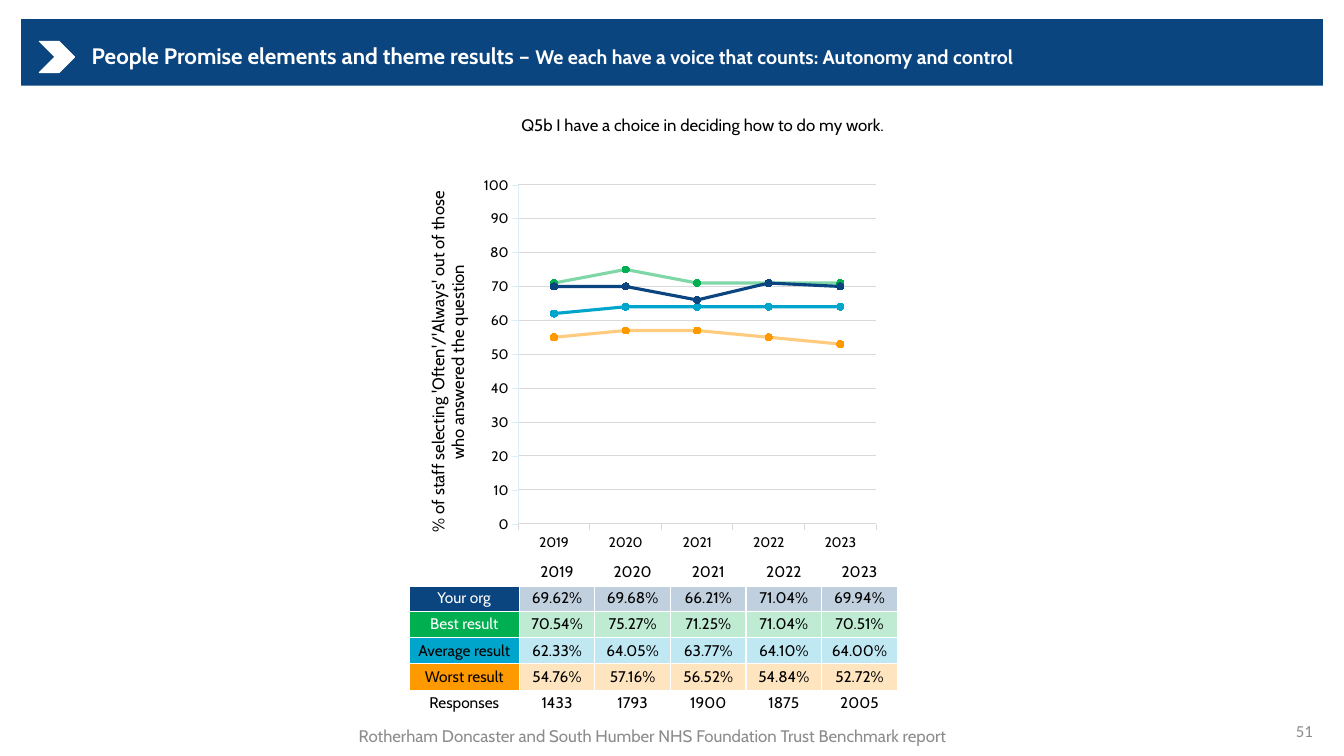
from dataclasses import dataclass

from lxml.etree import SubElement
from pptx import Presentation
from pptx.chart.data import CategoryChartData
from pptx.dml.color import RGBColor
from pptx.enum.chart import XL_CHART_TYPE as ChartType, XL_MARKER_STYLE as Marker, XL_TICK_MARK as Tick
from pptx.enum.shapes import MSO_SHAPE as Shape
from pptx.enum.text import MSO_ANCHOR as Anchor, MSO_AUTO_SIZE as AutoSize, PP_ALIGN as Align
from pptx.oxml.ns import qn
from pptx.util import Inches, Pt


@dataclass(frozen=True)
class Theme:
    font: str = "Cabin"
    number_font: str = "Calibri"
    navy: str = "0B457F"
    green: str = "00B050"
    cyan: str = "00A5CC"
    orange: str = "FF9900"
    white: str = "FFFFFF"
    black: str = "000000"
    grey: str = "8C8C8C"
    grid: str = "D9D9D9"
    axis: str = "DBEFF9"
    heading: int = 16
    subheading: int = 14
    label: int = 12
    cell: int = 11
    tick: int = 10


THEME = Theme()
CHART_WIDTH, CHART_HEIGHT = 4.84, 4.48
YEARS = ["2019", "2020", "2021", "2022", "2023"]
RESPONSES = [1433, 1793, 1900, 1875, 2005]
# name: (colour, label colour, line opacity in percent, yearly percentages)
RESULTS = {
    "Your org": (THEME.navy, THEME.white, 100, [69.62, 69.68, 66.21, 71.04, 69.94]),
    "Best result": (THEME.green, THEME.white, 50, [70.54, 75.27, 71.25, 71.04, 70.51]),
    "Average result": (THEME.cyan, THEME.black, 100, [62.33, 64.05, 63.77, 64.10, 64.00]),
    "Worst result": (THEME.orange, THEME.black, 50, [54.76, 57.16, 56.52, 54.84, 52.72]),
}
DRAW_ORDER = ["Average result", "Best result", "Worst result", "Your org"]


def style_font(font, size, color=THEME.black, name=THEME.font, bold=False):
    for key, value in {"size": Pt(size), "name": name, "bold": bold}.items():
        setattr(font, key, value)
    font.color.rgb = RGBColor.from_string(color)


def paint(fill, color):
    fill.solid()
    fill.fore_color.rgb = RGBColor.from_string(color)


def style_line(line, color, width):
    paint(line.fill, color)
    line.width = Pt(width)


def set_opacity(element, percent):
    for color in element.iter(qn("a:srgbClr")):
        SubElement(color, qn("a:alpha"), val=str(percent * 1000))


def add_run(para, text, size, **style):
    run = para.add_run()
    run.text = text
    style_font(run.font, size, **style)


def add_header_shape(page, kind, *place):
    shape = page.shapes.add_shape(kind, *map(Inches, place))
    shape.shadow.inherit = False
    shape.line.fill.background()
    return shape


def add_header(page):
    band = add_header_shape(page, Shape.RECTANGLE, 0.21, 0.19, 12.91, 0.66)
    paint(band.fill, THEME.navy)
    chevron = add_header_shape(page, Shape.CHEVRON, 0.39, 0.41, 0.35, 0.31)
    paint(chevron.fill, THEME.white)
    style_line(chevron.line, THEME.white, 0.75)

    title = page.shapes.title
    page.shapes._spTree.append(title._element)  # bring in front of the band
    place = {"left": 0.81, "top": 0.35, "width": 9.61, "height": 0.44}
    for key, value in place.items():
        setattr(title, key, Inches(value))
    frame = title.text_frame
    frame.auto_size = AutoSize.NONE
    frame.vertical_anchor = Anchor.MIDDLE
    para = frame.paragraphs[0]
    para.alignment = Align.LEFT
    para.line_spacing = 0.9
    for text, size in (
        ("People Promise elements and theme results – ", THEME.heading),
        ("We each have a voice that counts: Autonomy and control", THEME.subheading),
    ):
        add_run(para, text, size, color=THEME.white, bold=True)


def set_layout(element, index, **inches):
    """Place a chart part by inches from the chart's top left corner."""
    for old in element.findall(qn("c:layout")):
        element.remove(old)
    layout = SubElement(element, qn("c:layout"))
    element.insert(index, layout)
    manual = SubElement(layout, qn("c:manualLayout"))
    if "w" in inches:
        SubElement(manual, qn("c:layoutTarget"), val="inner")
    for key in ("x", "y"):
        SubElement(manual, qn(f"c:{key}Mode"), val="edge")
    for key, value in inches.items():
        whole = CHART_WIDTH if key in "xw" else CHART_HEIGHT
        SubElement(manual, qn(f"c:{key}"), val=str(value / whole))


def set_chart_title(title, text, **inches):
    para = title.text_frame.paragraphs[0]
    add_run(para, text, THEME.label)
    set_layout(title._element, 1, **inches)


def style_axis(axis, color, width):
    axis.major_tick_mark = Tick.OUTSIDE
    axis.minor_tick_mark = Tick.NONE
    style_font(axis.tick_labels.font, THEME.tick)
    style_line(axis.format.line, color, width)


def style_series(series, color, opacity):
    series.smooth = False
    style_line(series.format.line, color, 2.25)
    if opacity < 100:
        set_opacity(series._element, opacity)
    marker = series.marker
    marker.style = Marker.CIRCLE
    marker.size = 5
    paint(marker.format.fill, color)
    style_line(marker.format.line, color, 0.75)


def add_results_chart(page):
    data = CategoryChartData(number_format="0")
    data.categories = YEARS
    for name in DRAW_ORDER:
        data.add_series(name, [round(value) for value in RESULTS[name][-1]])
    place = map(Inches, (4.15, 0.98, CHART_WIDTH, CHART_HEIGHT))
    chart = page.shapes.add_chart(ChartType.LINE_MARKERS, *place, data).chart
    style_font(chart.font, THEME.tick)
    chart.has_legend = False
    chart.has_title = True
    set_chart_title(chart.chart_title, "Q5b I have a choice in deciding how to do my work.", x=0.99, y=0.12)
    set_layout(chart._chartSpace.chart.plotArea, 0, x=0.99, y=0.86, w=3.55, h=3.39)

    plot = chart.plots[0]
    plot.vary_by_categories = False
    for series in plot.series:
        color, _, opacity, _ = RESULTS[series.name]
        style_series(series, color, opacity)

    style_axis(chart.category_axis, THEME.grid, 0.75)
    values = chart.value_axis
    style_axis(values, THEME.axis, 0.25)
    for key, value in {"minimum_scale": 0, "maximum_scale": 100, "major_unit": 10}.items():
        setattr(values, key, value)
    style_line(values.major_gridlines.format.line, THEME.grid, 0.75)
    title = values.axis_title
    question = "% of staff selecting 'Often'/'Always' out of those who answered the question"
    set_chart_title(title, question, x=0.05, y=0.92)
    body = title.text_frame._txBody.bodyPr
    body.set("rot", "-5400000")
    body.set("vert", "horz")


def add_borders(cell, bottom):
    properties = cell._tc.get_or_add_tcPr()
    for side, width in {"L": 1, "R": 1, "T": 1, "B": bottom}.items():
        line = SubElement(properties, qn(f"a:ln{side}"), w=str(Pt(width)))
        SubElement(SubElement(line, qn("a:solidFill")), qn("a:srgbClr"), val=THEME.white)


def fill_cell(cell, text, color, fill, opacity, bottom):
    for side in ("left", "top", "right", "bottom"):
        setattr(cell, f"margin_{side}", 0)
    cell.vertical_anchor = Anchor.MIDDLE
    para = cell.text_frame.paragraphs[0]
    para.alignment = Align.CENTER
    if text:
        add_run(para, text, THEME.cell, color=color)
    else:
        SubElement(para._p, qn("a:endParaRPr"), sz=str(THEME.cell * 100))
    add_borders(cell, bottom)
    if fill is None:
        cell.fill.background()
        return
    paint(cell.fill, fill)
    if opacity < 100:
        set_opacity(cell._tc.tcPr.find(qn("a:solidFill")), opacity)


def add_results_table(page):
    rows = [("", THEME.black, None, YEARS)]
    for name, (fill, color, _, values) in RESULTS.items():
        rows.append((name, color, fill, [f"{value:.2f}%" for value in values]))
    rows.append(("Responses", THEME.black, None, map(str, RESPONSES)))

    place = map(Inches, (4.06, 5.54, 4.84, 1.57))
    table = page.shapes.add_table(len(rows), len(YEARS) + 1, *place).table
    table.first_row = table.horz_banding = False
    for index, column in enumerate(table.columns):
        column.width = Inches(0.75 if index else 1.09)
    for index, (name, color, fill, values) in enumerate(rows):
        bottom = 1 if index else 3
        fill_cell(table.cell(index, 0), name, color, fill, 100, bottom)
        for column, text in enumerate(values, 1):
            fill_cell(table.cell(index, column), text, THEME.black, fill, 25, bottom)


def add_footer(page, text, place, align, font):
    box = page.shapes.add_textbox(*map(Inches, place))
    frame = box.text_frame
    frame.word_wrap = True
    frame.vertical_anchor = Anchor.MIDDLE
    para = frame.paragraphs[0]
    para.alignment = align
    add_run(para, text, THEME.label, color=THEME.grey, name=font)


def main():
    deck = Presentation()
    deck.slide_width, deck.slide_height = Inches(13.33), Inches(7.5)
    page = deck.slides.add_slide(deck.slide_layouts.get_by_name("Title Only"))
    add_header(page)
    add_results_chart(page)
    add_results_table(page)
    add_footer(page, "51", (10.12, 7.05, 3, 0.4), Align.RIGHT, THEME.number_font)
    report = "Rotherham Doncaster and South Humber NHS Foundation Trust Benchmark report"
    add_footer(page, report, (2.95, 7.1, 7.05, 0.39), Align.CENTER, THEME.font)
    deck.save("out.pptx")


if __name__ == "__main__":
    main()
